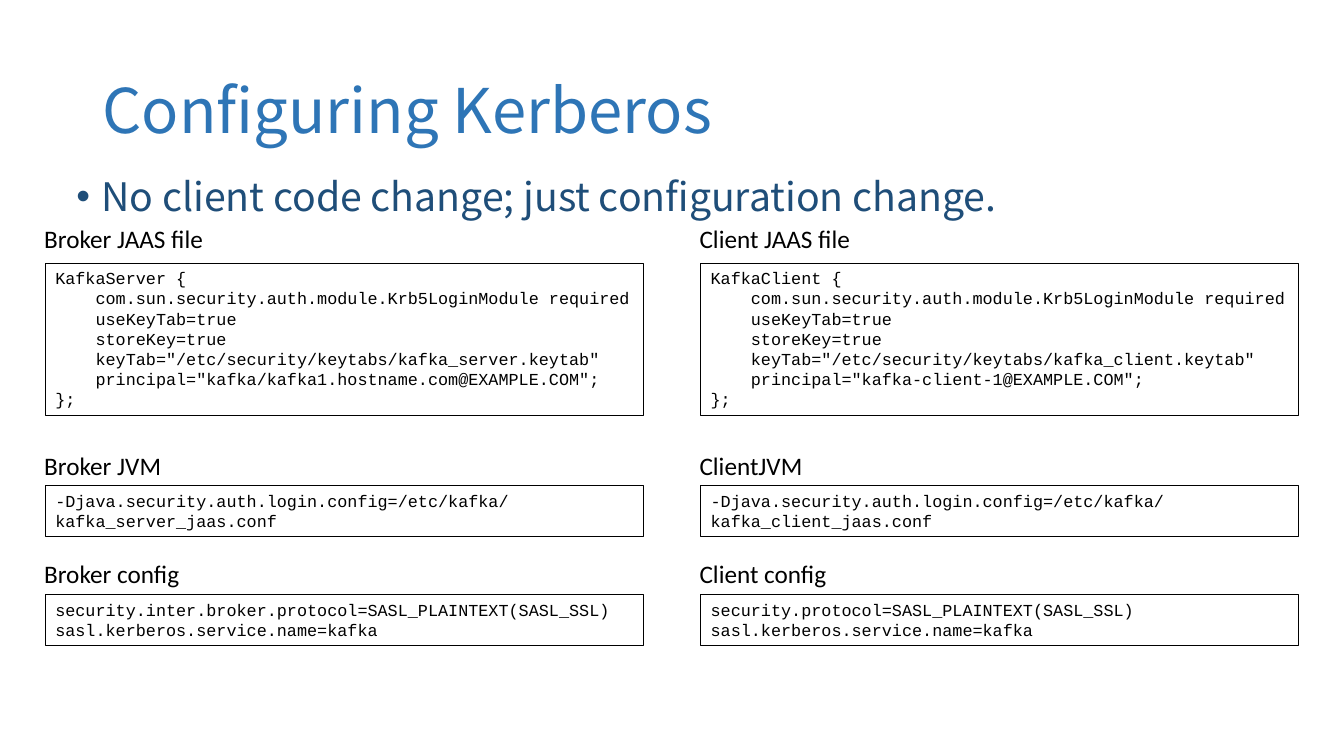
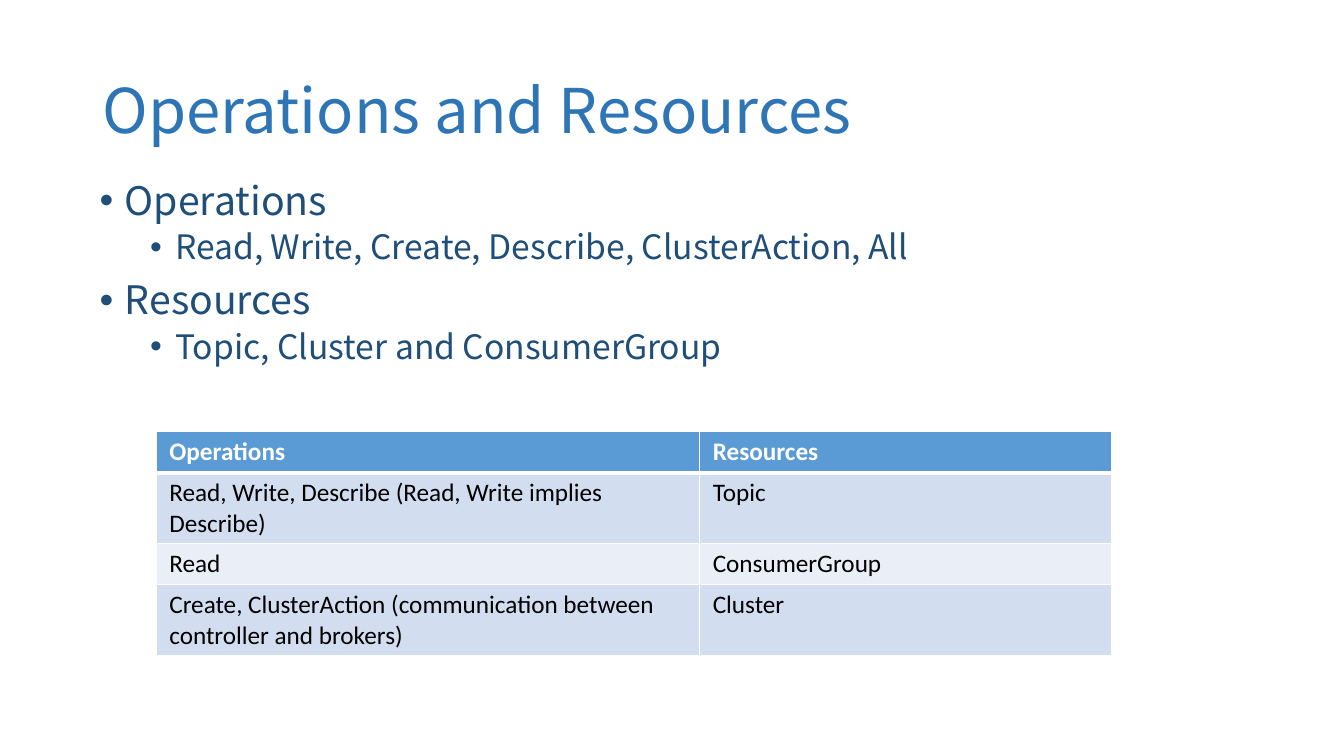
import pptx
import pptx.util
import pptx.dml.color
import pptx.enum.shapes
import pptx.enum.text
import pptx.oxml.ns
import lxml.etree

Inches = pptx.util.Inches
Pt = pptx.util.Pt

COLORS = {
    "title": "2E75B6",
    "body": "1F4E79",
    "text": "000000",
    "white": "FFFFFF",
    "head": "5B9BD5",
    "odd": "D2DEEF",
    "even": "EAEFF7",
}
HEAD_FONT = "Noto Sans CJK SC"
TEXT_FONT = "Calibri"
CODE_FONT = "Courier New"

# Each level: size, left indent, space before
LEVELS = [(28, 0.25, 10), (24, 0.75, 5)]

CODE_W = 5.93
# Each row: label top, code top, code height
ROWS = [(2.17, 2.61, 1.51), (4.42, 4.82, 0.5), (5.49, 5.9, 0.5)]


def jaas(name, keytab, principal):
    return [
        name + " {",
        "    com.sun.security.auth.module.Krb5LoginModule required",
        "    useKeyTab=true",
        "    storeKey=true",
        f'    keyTab="/etc/security/keytabs/{keytab}.keytab"',
        f'    principal="{principal}@EXAMPLE.COM";',
        "};",
    ]


def jvm(role):
    return [f"-Djava.security.auth.login.config=/etc/kafka/kafka_{role}_jaas.conf"]


def config(key):
    return [key + "=SASL_PLAINTEXT(SASL_SSL)", "sasl.kerberos.service.name=kafka"]


# Each entry: label, label width, code lines
BROKER = [
    ("Broker JAAS file", 1.81, jaas("KafkaServer", "kafka_server", "kafka/kafka1.hostname.com")),
    ("Broker JVM", 1.39, jvm("server")),
    ("Broker config", 1.57, config("security.inter.broker.protocol")),
]
CLIENT = [
    ("Client JAAS file", 1.72, jaas("KafkaClient", "kafka_client", "kafka-client-1")),
    ("ClientJVM", 1.23, jvm("client")),
    ("Client config", 1.48, config("security.protocol")),
]

GRANTS = [
    ("Operations", "Resources"),
    ("Read, Write, Describe (Read, Write implies Describe)", "Topic"),
    ("Read", "ConsumerGroup"),
    ("Create, ClusterAction (communication between controller and brokers)", "Cluster"),
]


def color(key):
    return pptx.dml.color.RGBColor.from_string(COLORS[key])


def add_run(para, text, size, font, key, bold=False):
    run = para.add_run()
    run.text = text
    run.font.size = Pt(size)
    run.font.name = font
    run.font.bold = bold
    run.font.color.rgb = color(key)


def next_para(frame, index):
    return frame.add_paragraph() if index else frame.paragraphs[0]


def add_box(slide, left, top, width, height, wrap=True):
    box = slide.shapes.add_textbox(Inches(left), Inches(top), Inches(width), Inches(height))
    box.text_frame.word_wrap = wrap
    return box.text_frame


def add_title(slide, text):
    frame = add_box(slide, 0.92, 0.4, 11.5, 1.45)
    frame.vertical_anchor = pptx.enum.text.MSO_ANCHOR.MIDDLE
    para = frame.paragraphs[0]
    para.line_spacing = 0.9
    add_run(para, text, 44, HEAD_FONT, "title")


def add_bullets(slide, left, top, height, items):
    frame = add_box(slide, left, top, 11.89, height)
    for index, (level, text) in enumerate(items):
        size, indent, before = LEVELS[level]
        para = next_para(frame, index)
        para.level = level
        props = para._p.get_or_add_pPr()
        props.set("marL", str(Inches(indent)))
        props.set("indent", str(-Inches(0.25)))
        for tag, name, value in (("a:buFont", "typeface", "Arial"), ("a:buChar", "char", "•")):
            lxml.etree.SubElement(props, pptx.oxml.ns.qn(tag)).set(name, value)
        para.line_spacing = 0.9
        para.space_before = Pt(before if index else 0)
        add_run(para, text, size, HEAD_FONT, "body")


def add_label(slide, left, top, width, text):
    frame = add_box(slide, left, top, width, 0.4, wrap=False)
    frame.auto_size = pptx.enum.text.MSO_AUTO_SIZE.SHAPE_TO_FIT_TEXT
    add_run(frame.paragraphs[0], text, 18, TEXT_FONT, "text")


def add_code(slide, left, top, height, lines):
    rect = slide.shapes.add_shape(
        pptx.enum.shapes.MSO_SHAPE.RECTANGLE,
        Inches(left), Inches(top), Inches(CODE_W), Inches(height))
    rect.shadow.inherit = False
    rect.fill.background()
    rect.line.color.rgb = color("text")
    rect.line.width = Pt(0.75)
    frame = rect.text_frame
    frame.word_wrap = True
    frame.auto_size = pptx.enum.text.MSO_AUTO_SIZE.SHAPE_TO_FIT_TEXT
    frame.vertical_anchor = pptx.enum.text.MSO_ANCHOR.TOP
    for index, line in enumerate(lines):
        para = next_para(frame, index)
        para.alignment = pptx.enum.text.PP_ALIGN.LEFT
        add_run(para, line, 12, CODE_FONT, "text")


def add_column(slide, left, entries):
    """Stack labelled code boxes; labels hang slightly left of the boxes."""
    for (label_y, code_y, height), (label, width, lines) in zip(ROWS, entries):
        add_label(slide, left - 0.11, label_y, width, label)
        add_code(slide, left, code_y, height, lines)


def set_edges(cell, bottom):
    qn = pptx.oxml.ns.qn
    props = cell._tc.get_or_add_tcPr()
    for side, width in (("L", 1), ("R", 1), ("T", 1), ("B", bottom)):
        edge = lxml.etree.SubElement(props, qn("a:ln" + side), w=str(Pt(width)))
        fill = lxml.etree.SubElement(edge, qn("a:solidFill"))
        lxml.etree.SubElement(fill, qn("a:srgbClr"), val=COLORS["white"])


def add_grid(slide, left, top, widths, rows):
    high = 0.41
    grid = slide.shapes.add_table(
        len(rows), len(widths), Inches(left), Inches(top),
        Inches(sum(widths)), Inches(high * len(rows))).table
    for col, width in zip(grid.columns, widths):
        col.width = Inches(width)
    for r, row in enumerate(rows):
        grid.rows[r].height = Inches(high)
        head = r == 0
        shade = "head" if head else ("odd" if r % 2 else "even")
        for c, text in enumerate(row):
            cell = grid.cell(r, c)
            cell.margin_left = cell.margin_right = Inches(0.13)
            set_edges(cell, 3 if head else 1)
            cell.fill.solid()
            cell.fill.fore_color.rgb = color(shade)
            add_run(cell.text_frame.paragraphs[0], text, 18, TEXT_FONT,
                    "white" if head else "text", head)


def add_slide(deck, title):
    slide = deck.slides.add_slide(deck.slide_layouts[6])
    add_title(slide, title)
    return slide


def main():
    deck = pptx.Presentation()
    deck.slide_width = Inches(13.33)
    deck.slide_height = Inches(7.5)

    slide = add_slide(deck, "Configuring Kerberos")
    add_bullets(slide, 0.66, 1.71, 0.81,
                [(0, "No client code change; just configuration change.")])
    add_column(slide, 0.45, BROKER)
    add_column(slide, 6.95, CLIENT)

    slide = add_slide(deck, "Operations and Resources")
    add_bullets(slide, 0.89, 1.75, 2.33, [
        (0, "Operations"),
        (1, "Read, Write, Create, Describe, ClusterAction, All"),
        (0, "Resources"),
        (1, "Topic, Cluster and ConsumerGroup"),
    ])
    add_grid(slide, 1.55, 4.28, [5.39, 4.09], GRANTS)

    deck.save("out.pptx")


if __name__ == "__main__":
    main()
